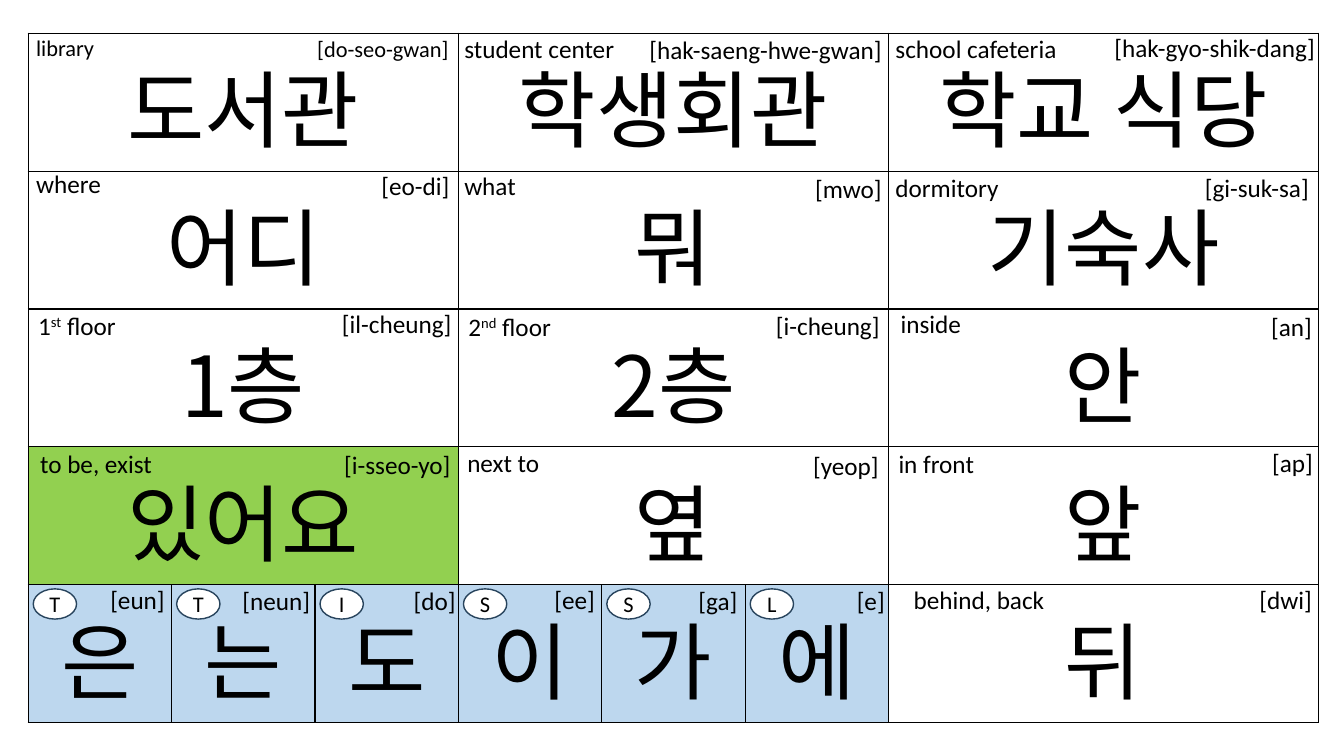
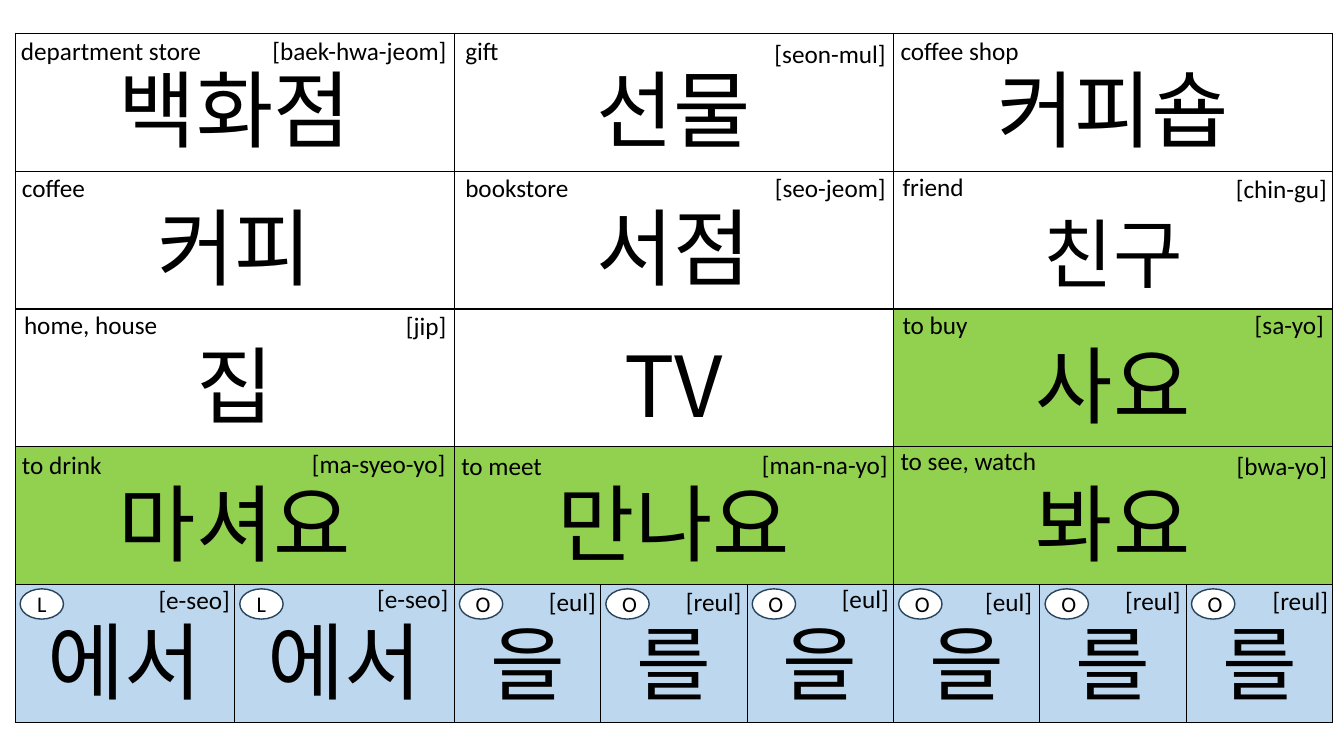
from dataclasses import dataclass
from itertools import accumulate

from lxml.etree import SubElement
from pptx import Presentation
from pptx.dml.color import RGBColor
from pptx.enum.shapes import MSO_SHAPE
from pptx.enum.text import MSO_ANCHOR, MSO_AUTO_SIZE, PP_ALIGN
from pptx.oxml.ns import qn
from pptx.util import Emu, Pt

PX = 9144  # 100 px to the inch
SLIDE_W, SLIDE_H = 1333, 750
GRID_TOP, GRID_H, ROW_COUNT = 33, 684, 5
ROW_H = GRID_H / ROW_COUNT
LABEL_H, ENGLISH_W, ROMAN_W, PARTICLE_ROMAN_W = 40, 240, 280, 108
BADGE_W, BADGE_H, BADGE_DX, BADGE_DY = 43, 30, 5, 4

BLACK = RGBColor(0x00, 0x00, 0x00)
WHITE = RGBColor(0xFF, 0xFF, 0xFF)
VERB_GREEN = RGBColor(0x92, 0xD0, 0x50)
PARTICLE_BLUE = RGBColor(0xBD, 0xD7, 0xEE)
BADGE_LINE = RGBColor(0x28, 0x44, 0x5D)
LABEL_FONT, KOREAN_FONT = "Calibri", "Noto Sans CJK KR"


@dataclass
class Word:
    """A card; labels are (text, dx, dy) from the cell's top left or top right corner."""
    korean: str
    english: tuple = None
    roman: tuple = None
    verb: bool = False
    badge: str = ""
    korean_pt: int = 60
    label_pt: int = 18


def particle(korean, badge, roman, korean_pt=60):
    return Word(korean, roman=roman, badge=badge, korean_pt=korean_pt)


# Each sheet is three equal blocks; "parts" is the number of columns in each block.
# Rows hold one word per block, the last row one word per column.
SHEETS = [
    {"left": 28, "width": 1280, "parts": (3, 3, 1), "rows": [
        [Word("도서관", ("library", -2, -4), ("[do-seo-gwan]", 0, -3), label_pt=16),
         Word("학생회관", ("student center", -4, -5), ("[hak-saeng-hwe-gwan]", 3, -4)),
         Word("학교 식당", ("school cafeteria", -3, -5), ("[hak-gyo-shik-dang]", 6, -6))],
        [Word("어디", ("where", -2, -8), ("[eo-di]", 1, -6)),
         Word("뭐", ("what", -4, -6), ("[mwo]", 3, -3)),
         Word("기숙사", ("dormitory", -3, -4), ("[gi-suk-sa]", 0, -4))],
        [Word("1층", ("1^st^ floor", 0, -4), ("[il-cheung]", 3, -6)),
         Word("2층", ("2^nd^ floor", 0, -3), ("[i-cheung]", 1, -4)),
         Word("안", ("inside", 2, -6), ("[an]", 3, -3))],
        [Word("있어요", ("to be, exist", 2, -4), ("[i-sseo-yo]", 2, -3), verb=True),
         Word("옆", ("next to", -1, -5), ("[yeop]", 0, -2)),
         Word("앞", ("in front", 0, -4), ("[ap]", 4, -5))],
        [particle("은", "T", ("[eun]", 3, -5)),
         particle("는", "T", ("[neun]", 5, -4)),
         particle("도", "I", ("[do]", 7, -4)),
         particle("이", "S", ("[ee]", 3, -5)),
         particle("가", "S", ("[ga]", 2, -4)),
         particle("에", "L", ("[e]", 6, -4)),
         Word("뒤", ("behind, back", 15, -5), ("[dwi]", 3, -5))],
    ]},
    {"left": 15, "width": 1307, "parts": (2, 3, 3), "rows": [
        [Word("백화점", ("department store", -4, -3), ("[baek-hwa-jeom]", 2, -3)),
         Word("선물", ("gift", 1, -3), ("[seon-mul]", 2, 0)),
         Word("커피숍", ("coffee shop", -3, -3))],
        [Word("커피", ("coffee", -3, -4)),
         Word("서점", ("bookstore", 1, -4), ("[seo-jeom]", 2, -4)),
         Word("친구", ("friend", -1, -5), ("[chin-gu]", 4, -3), korean_pt=54)],
        [Word("집", ("home, house", -1, -5), ("[jip]", 2, -4)),
         Word("TV"),
         Word("사요", ("to buy", -1, -5), ("[sa-yo]", 1, -5), verb=True)],
        [Word("마셔요", ("to drink", -3, -3), ("[ma-syeo-yo]", 1, -4), verb=True),
         Word("만나요", ("to meet", -3, -2), ("[man-na-yo]", 4, -3), verb=True),
         Word("봐요", ("to see, watch", -3, -7), ("[bwa-yo]", 4, -2), verb=True)],
        [particle("에서", "L", ("[e-seo]", 5, -5)),
         particle("에서", "L", ("[e-seo]", 4, -6)),
         particle("을", "O", ("[eul]", 5, -3), 58),
         particle("를", "O", ("[reul]", 4, -3), 58),
         particle("을", "O", ("[eul]", 5, -6), 58),
         particle("을", "O", ("[eul]", 2, -3), 58),
         particle("를", "O", ("[reul]", 4, -4), 58),
         particle("를", "O", ("[reul]", 5, -4), 58)],
    ]},
]


def box(*lengths):
    return [Emu(round(length * PX)) for length in lengths]


def style_run(run, font, size):
    run.font.name = font
    run.font.size = Pt(size)
    run.font.color.rgb = BLACK


def add_borders(cell):
    properties = cell._tc.get_or_add_tcPr()
    for side in ("a:lnL", "a:lnR", "a:lnT", "a:lnB"):
        line = SubElement(properties, qn(side), w=str(Pt(1)))
        SubElement(SubElement(line, qn("a:solidFill")), qn("a:srgbClr"), val=str(BLACK))


def fill_cell(cell, word):
    cell.vertical_anchor = MSO_ANCHOR.BOTTOM
    cell.text_frame.text = word.korean
    paragraph = cell.text_frame.paragraphs[0]
    paragraph.alignment = PP_ALIGN.CENTER
    run = paragraph.runs[0]
    style_run(run, KOREAN_FONT, word.korean_pt)
    SubElement(run.font._element, qn("a:ea"), typeface=KOREAN_FONT)
    if word.verb or word.badge:
        cell.fill.solid()
        cell.fill.fore_color.rgb = VERB_GREEN if word.verb else PARTICLE_BLUE
    else:
        cell.fill.background()


def add_label(slide, text, left, top, width, size, alignment):
    """Add a label; text between two ^ signs is raised."""
    frame = slide.shapes.add_textbox(*box(left, top, width, LABEL_H)).text_frame
    frame.word_wrap = True
    frame.auto_size = MSO_AUTO_SIZE.SHAPE_TO_FIT_TEXT
    paragraph = frame.paragraphs[0]
    paragraph.alignment = alignment
    for index, piece in enumerate(text.split("^")):
        run = paragraph.add_run()
        run.text = piece
        style_run(run, LABEL_FONT, size)
        if index % 2:
            run.font._element.set("baseline", "30000")


def add_badge(slide, letter, left, top):
    badge = slide.shapes.add_shape(MSO_SHAPE.OVAL, *box(left, top, BADGE_W, BADGE_H))
    badge.shadow.inherit = False
    badge.fill.solid()
    badge.fill.fore_color.rgb = WHITE
    badge.line.color.rgb = BADGE_LINE
    badge.line.width = Pt(1)
    badge.text_frame.text = letter
    badge.text_frame.vertical_anchor = MSO_ANCHOR.MIDDLE
    paragraph = badge.text_frame.paragraphs[0]
    paragraph.alignment = PP_ALIGN.CENTER
    style_run(paragraph.runs[0], LABEL_FONT, 16)


def add_notes_on_card(slide, word, left, right, top):
    """Add the English, the romanisation and the badge around the Korean word."""
    if word.english:
        text, dx, dy = word.english
        add_label(slide, text, left + dx, top + dy, ENGLISH_W, word.label_pt, PP_ALIGN.LEFT)
    if word.roman:
        text, dx, dy = word.roman
        width = PARTICLE_ROMAN_W if word.badge else ROMAN_W
        add_label(slide, text, right + dx - width, top + dy, width, word.label_pt,
                  PP_ALIGN.RIGHT)
    if word.badge:
        add_badge(slide, word.badge, left + BADGE_DX, top + BADGE_DY)


def build_sheet(slide, sheet):
    left, width, parts = sheet["left"], sheet["width"], sheet["parts"]
    column_widths = [width / len(parts) / part for part in parts for _ in range(part)]
    edges = list(accumulate(column_widths, initial=left))
    table = slide.shapes.add_table(ROW_COUNT, len(column_widths),
                                   *box(left, GRID_TOP, width, GRID_H)).table
    table.first_row = table.horz_banding = False
    for column, column_width in zip(table.columns, column_widths):
        column.width = box(column_width)[0]
    for row in table.rows:
        row.height = box(ROW_H)[0]
    for cell in table.iter_cells():
        add_borders(cell)

    for row_index, words in enumerate(sheet["rows"]):
        last_row = row_index == ROW_COUNT - 1
        spans = [1] * len(column_widths) if last_row else parts
        starts = accumulate(spans, initial=0)
        for word, start, span in zip(words, starts, spans):
            cell = table.cell(row_index, start)
            if span > 1:
                cell.merge(table.cell(row_index, start + span - 1))
            fill_cell(cell, word)
            add_notes_on_card(slide, word, edges[start], edges[start + span],
                              GRID_TOP + row_index * ROW_H)


def main():
    deck = Presentation()
    deck.slide_width, deck.slide_height = box(SLIDE_W, SLIDE_H)
    for sheet in SHEETS:
        build_sheet(deck.slides.add_slide(deck.slide_layouts[6]), sheet)
    deck.save("out.pptx")


if __name__ == "__main__":
    main()
